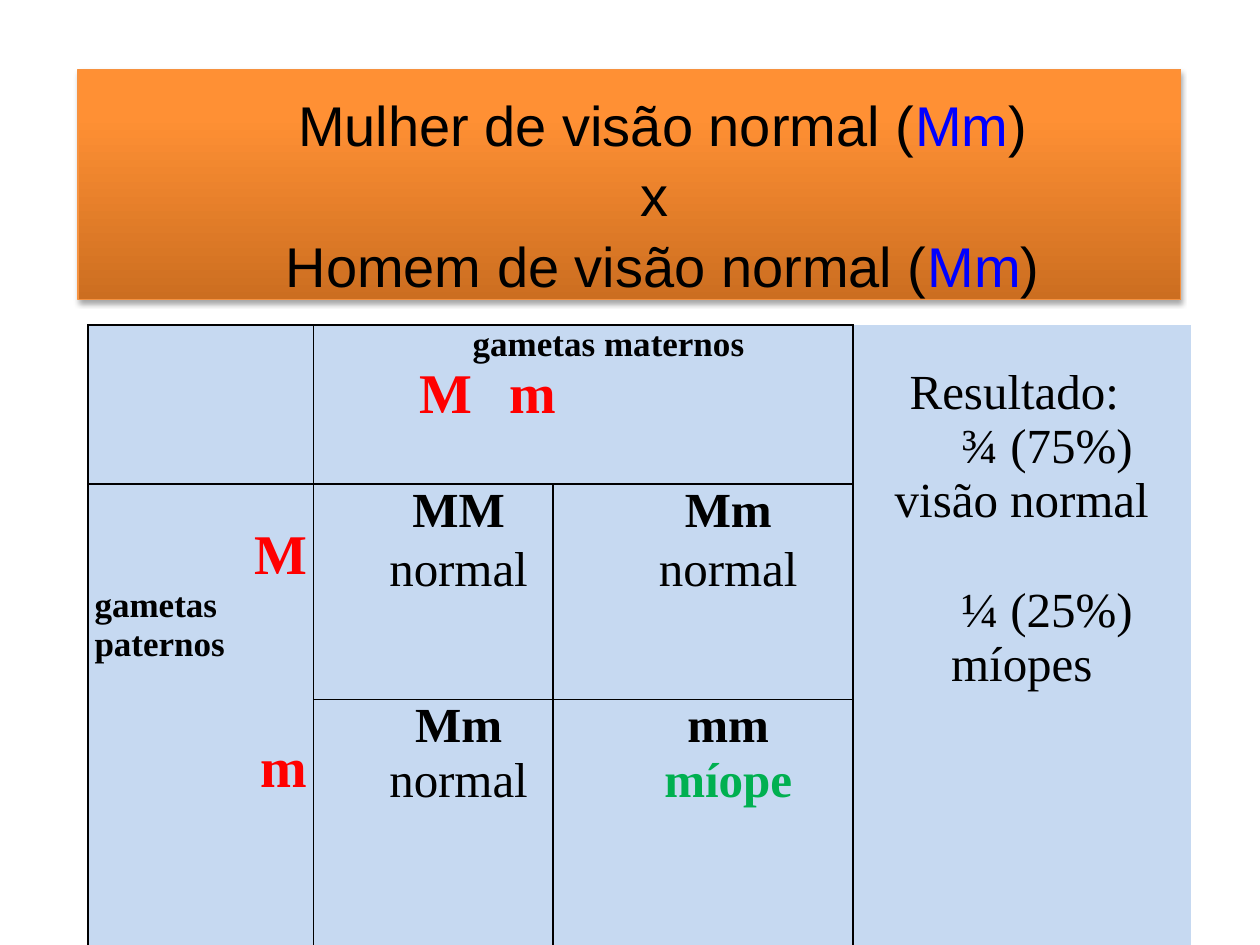
from lxml import etree
from pptx import Presentation
from pptx import util as u
from pptx.dml.color import RGBColor
from pptx.enum import text
from pptx.oxml import ns

Pt = u.Pt
AL = text.PP_ALIGN
THEME = {
    "black": "000000", "red": "FF0000", "blue": "0000FF", "green": "00B050",
    "cell": "C6D9F1", "dark": "CC6E20", "light": "FF9034", "edge": "F69240",
    "title_font": "Arial", "table_font": "Times New Roman",
    "label": 20, "body": 28, "gamete": 32,
}
INDENT = 28.8


def add_xml(parent, tag, **attrs):
    return etree.SubElement(parent, ns.qn(tag), {k: str(v) for k, v in attrs.items()})


def write(tf, lines, font):
    """Each line: (runs, alignment, first-line indent, space before, space after);
    each run: (text, size, colour, bold)."""
    for i, (runs, align, indent, before, after) in enumerate(lines):
        p = tf.paragraphs[0] if i == 0 else tf.add_paragraph()
        p.alignment = align
        p.space_before, p.space_after = Pt(before), Pt(after)
        pPr = p._p.get_or_add_pPr()
        pPr.set("marL", "0")
        pPr.set("indent", str(Pt(indent)))
        for words, size, color, bold in runs:
            r = p.add_run()
            r.text = words
            r.font.name, r.font.size, r.font.bold = font, Pt(THEME[size]), bold
            r.font.color.rgb = RGBColor.from_string(THEME[color])


prs = Presentation()
prs.slide_width, prs.slide_height = Pt(720), Pt(540)
s = prs.slides.add_slide(prs.slide_layouts[5])

# Title banner
sp = s.shapes.title
sp.left, sp.top, sp.width, sp.height = Pt(44.64), Pt(39.6), Pt(630), Pt(131.76)
sp.fill.gradient()
sp.fill.gradient_angle = 90
for stop, color, position in zip(sp.fill.gradient_stops, ("dark", "light"), (0, 0.8)):
    stop.color.rgb = RGBColor.from_string(THEME[color])
    stop.position = position
sp.line.color.rgb = RGBColor.from_string(THEME["edge"])
sp.line.width = Pt(0.75)
effects = add_xml(sp._element.spPr, "a:effectLst")
shadow = add_xml(effects, "a:outerShdw", blurRad=Pt(3.1), dist=Pt(1.8),
                 dir=5400000, rotWithShape=0)
add_xml(add_xml(shadow, "a:srgbClr", val=THEME["black"]), "a:alpha", val=35000)

tf = sp.text_frame
tf.word_wrap = True
tf.auto_size = text.MSO_AUTO_SIZE.NONE
tf.vertical_anchor = text.MSO_ANCHOR.MIDDLE
tf.margin_left = tf.margin_right = Pt(7.2)
tf.margin_top, tf.margin_bottom = Pt(12.24), Pt(2.88)
parents = [[(f"{who} de visão normal (", "gamete", "black", False),
            ("Mm", "gamete", "blue", False),
            (")", "gamete", "black", False)] for who in ("Mulher", "Homem")]
cross = [("x", "gamete", "black", False)]
write(tf, [(parents[0], AL.CENTER, 38, 0, 0),
           (cross, AL.CENTER, INDENT, 0, 0),
           (parents[1], AL.CENTER, 38, 0, 0)], THEME["title_font"])
for p in tf.paragraphs:
    p.line_spacing = 1.05

# Table grid
widths = [128.88, 136.8, 171.36, 192.96]
heights = [90.72, 123.12, 140.4]
table = s.shapes.add_table(3, 4, Pt(50.4), Pt(185.76),
                           Pt(sum(widths)), Pt(sum(heights))).table
table.first_row = table.horz_banding = False
for column, width in zip(table.columns, widths):
    column.width = Pt(width)
for row, height in zip(table.rows, heights):
    row.height = Pt(height)

# Cell borders, fills and margins; the result column is open on the right
for row in range(3):
    for col in range(4):
        cell = table.cell(row, col)
        tcPr = cell._tc.get_or_add_tcPr()
        for side in "LRTB":
            ln = add_xml(tcPr, f"a:ln{side}", w=Pt(1))
            if col < 3 or side == "L":
                add_xml(add_xml(ln, "a:solidFill"), "a:srgbClr", val=THEME["black"])
            else:
                add_xml(ln, "a:noFill")
        cell.fill.solid()
        cell.fill.fore_color.rgb = RGBColor.from_string(THEME["cell"])
        cell.margin_left = cell.margin_right = Pt(3.6)
        cell.margin_top = cell.margin_bottom = 0

maternal, paternal, result = table.cell(0, 1), table.cell(1, 0), table.cell(0, 3)
maternal.merge(table.cell(0, 2))
paternal.merge(table.cell(2, 0))
result.merge(table.cell(2, 3))
paternal.margin_top = result.margin_top = Pt(23)

# Gametes
font = THEME["table_font"]
write(maternal.text_frame, [
    ([("gametas maternos", "label", "black", True)], AL.CENTER, INDENT, 0, 0),
    ([("M\tm", "gamete", "red", True)], AL.LEFT, 57, 0, 0)], font)
tabs = add_xml(maternal.text_frame.paragraphs[1]._p.pPr, "a:tabLst")
add_xml(tabs, "a:tab", pos=Pt(247), algn="l")
write(paternal.text_frame, [
    ([("M", "gamete", "red", True)], AL.RIGHT, 0, 0, 0),
    ([("gametas paternos", "label", "black", True)], AL.LEFT, 0, 0, 0),
    ([("m", "gamete", "red", True)], AL.RIGHT, 0, 42, 0)], font)

# Offspring
offspring = [
    (1, 1, "MM", "normal", 3), (1, 2, "Mm", "normal", 3),
    (2, 1, "Mm", "normal", 0), (2, 2, "mm", "míope", 0),
]
for row, col, genes, sight, after in offspring:
    short = sight == "míope"
    write(table.cell(row, col).text_frame, [
        ([(genes, "body", "black", True)], AL.CENTER, INDENT, 0, after),
        ([(sight, "body", "green" if short else "black", short)],
         AL.CENTER, INDENT, 0, 0)], font)

# Result
write(result.text_frame, [
    ([(words, "body", "black", False)], align, INDENT, before, 0)
    for words, align, before in (("Resultado:", AL.LEFT, 0),
                                 ("¾ (75%) visão normal", AL.CENTER, 0),
                                 ("¼ (25%) míopes", AL.CENTER, 32))], font)

prs.save("out.pptx")
